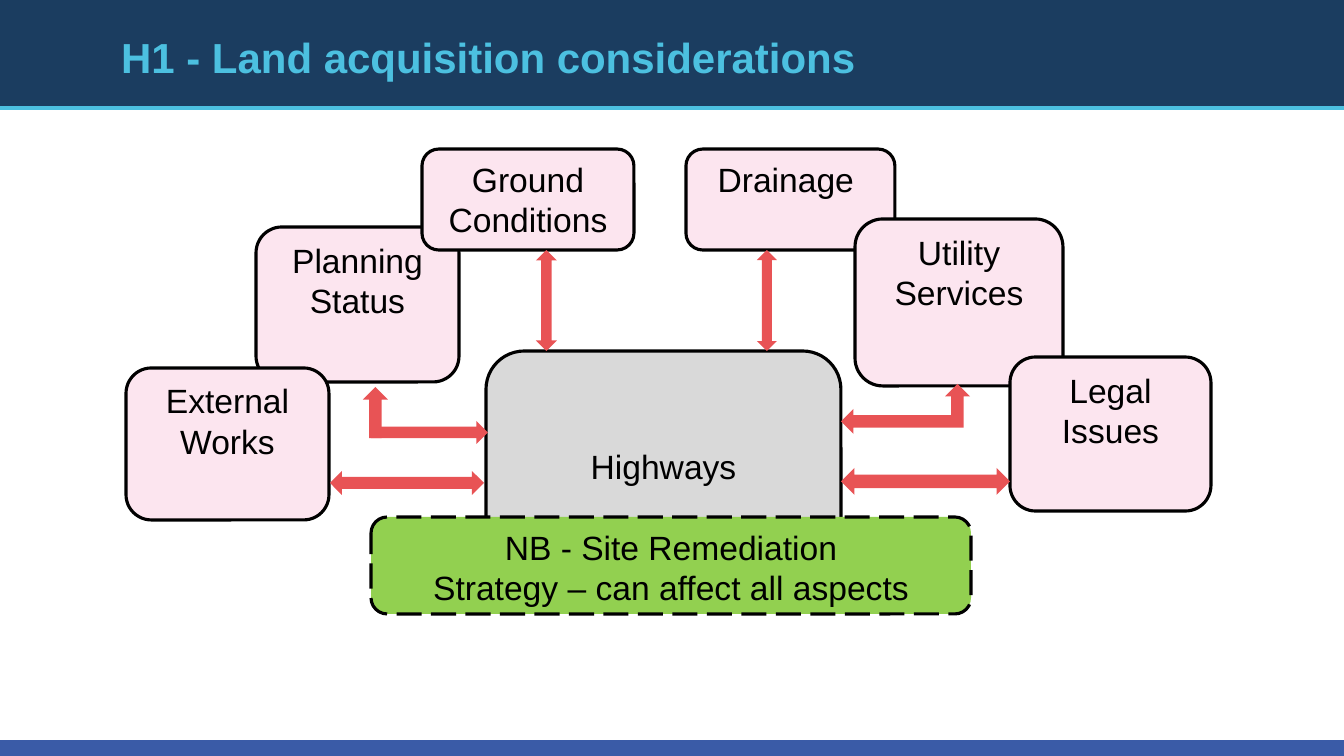
from pptx import Presentation, util as u
from pptx.dml.color import RGBColor
from pptx.enum import dml, shapes, text
from pptx.oxml.ns import qn
from lxml import etree

PX = 914400 / 100.8
WIDE, HIGH = 1344, 756
NAVY, SKY, BLUE, RED = "1B3D60", "4CC0E0", "3A5BA7", "E85355"
PINK, GREY, GREEN, BLACK = "FCE5EF", "D9D9D9", "92D050", "000000"
KIND = shapes.MSO_SHAPE

TITLE = "H1 - Land acquisition considerations"
BANDS = [((0, 740, WIDE, 16), BLUE), ((0, 0, WIDE, 108), NAVY)]
# place, fill, lines of text
TOPICS = [
    ((256, 227, 203, 155), PINK, ["Planning Status"]),
    ((422, 149, 212, 101), PINK, ["Ground Conditions"]),
    ((686, 149, 209, 101), PINK, ["Drainage "]),
    ((855, 219, 208, 167), PINK, ["Utility Services"]),
    ((126, 368, 203, 152), PINK, ["External Works"]),
    ((486, 351, 355, 230), GREY, ["Highways"]),
    ((1010, 357, 201, 154), PINK, ["Legal Issues"]),
]
ARROWS = [
    (KIND.UP_DOWN_ARROW, (536, 250, 21, 101)),
    (KIND.UP_DOWN_ARROW, (757, 250, 20, 101)),
    (KIND.LEFT_RIGHT_ARROW, (330, 471, 154, 24)),
    (KIND.LEFT_RIGHT_ARROW, (841, 468, 169, 27)),
    (KIND.LEFT_UP_ARROW, (841, 384, 129, 50)),
    (KIND.RIGHT_ARROW, (371, 421, 117, 23)),
    (KIND.UP_ARROW, (363, 387, 25, 51)),
]
NOTE = ((371, 517, 600, 97), GREEN,
        ["NB - Site Remediation", "Strategy – can affect all aspects"])


def emu(*vals):
    return [u.Emu(round(v * PX)) for v in vals]


def hue(code):
    return RGBColor.from_string(code)


def style(font, size, color, bold=False):
    form = {"name": "Arial", "size": u.Pt(size), "bold": bold}
    for key, val in form.items():
        setattr(font, key, val)
    font.color.rgb = hue(color)


def block(kind, place, fill):
    shape = slide.shapes.add_shape(kind, *emu(*place))
    shape.shadow.inherit = False
    shape.fill.solid()
    shape.fill.fore_color.rgb = hue(fill)
    shape.line.fill.background()
    return shape


def card(place, fill, lines, anchor=text.MSO_ANCHOR.TOP):
    """Add an outlined rounded box with centred text."""
    shape = block(KIND.ROUNDED_RECTANGLE, place, fill)
    shape.line.color.rgb = hue(BLACK)
    shape.line.width = u.Pt(2.25)
    frame = shape.text_frame
    frame.word_wrap = True
    frame.vertical_anchor = anchor
    frame.text = "\n".join(lines)
    for para in frame.paragraphs:
        para.alignment = text.PP_ALIGN.CENTER
        style(para.font, 24, BLACK)
    return shape


deck = Presentation()
deck.slide_width, deck.slide_height = emu(WIDE, HIGH)
slide = deck.slides.add_slide(deck.slide_layouts[5])

for place, fill in BANDS:
    block(KIND.RECTANGLE, place, fill)
rule = slide.shapes.add_connector(
    shapes.MSO_CONNECTOR.STRAIGHT, *emu(0, 108, WIDE, 108))
rule.line.color.rgb = hue(SKY)
rule.line.width = u.Pt(3.5)
etree.SubElement(rule._element.spPr, qn("a:effectLst"))

title = slide.shapes.title
slide.shapes._spTree.append(title._element)  # in front of the bands
title.left, title.top, title.width, title.height = emu(111, 7, 1142, 99)
title.fill.solid()
title.fill.fore_color.rgb = hue(NAVY)
title.text_frame.text = TITLE
title.text_frame.vertical_anchor = text.MSO_ANCHOR.MIDDLE
head = title.text_frame.paragraphs[0]
head.alignment = text.PP_ALIGN.LEFT
style(head.font, 30, SKY, True)

for place, fill, lines in TOPICS:
    mid = fill == GREY
    card(place, fill, lines,
         text.MSO_ANCHOR.MIDDLE if mid else text.MSO_ANCHOR.TOP)
for kind, place in ARROWS:
    block(kind, place, RED)
card(*NOTE).line.dash_style = dml.MSO_LINE.LONG_DASH

deck.save("out.pptx")
